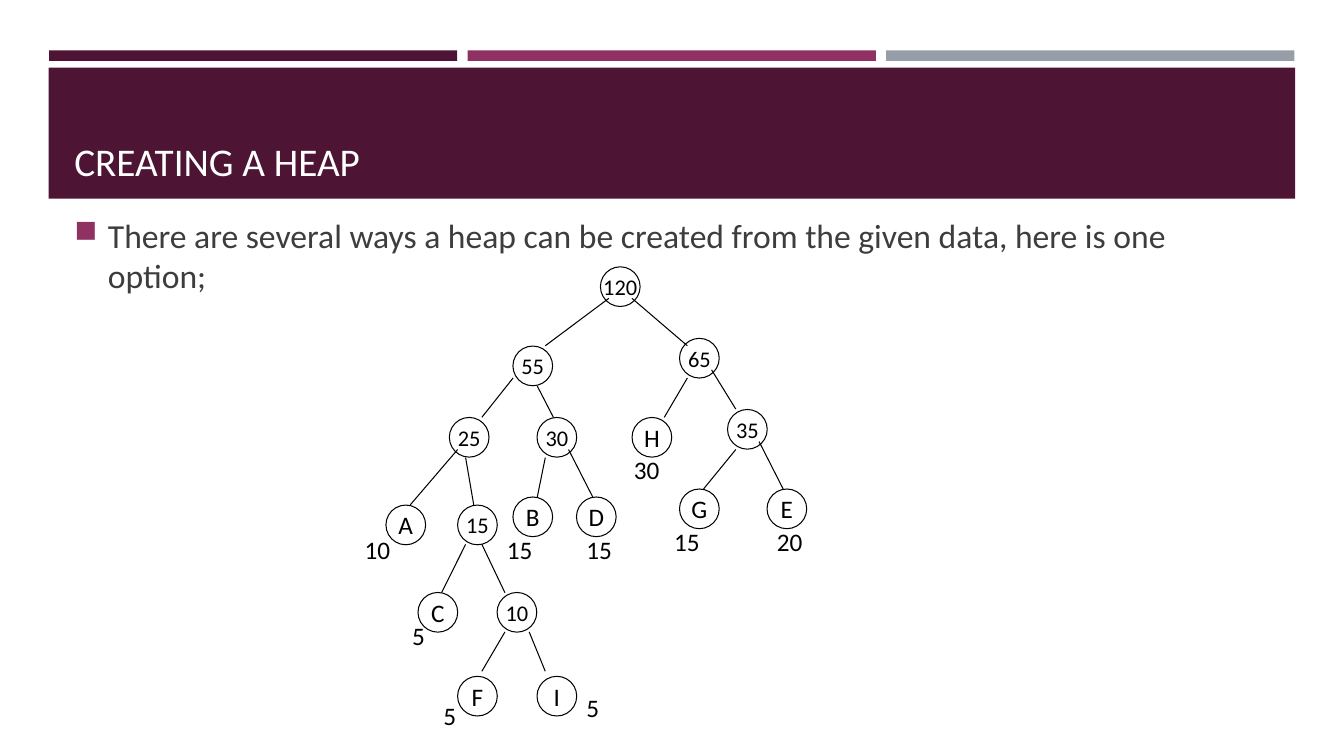
from lxml import etree
from pptx import Presentation
from pptx.dml.color import RGBColor as RGB
from pptx.enum.shapes import MSO_CONNECTOR as CONN, MSO_SHAPE as SHAPE
from pptx.enum.text import MSO_ANCHOR as ANCHOR, PP_ALIGN as ALIGN
from pptx.oxml.ns import qn
from pptx.util import Pt

THEME = {
    "font": "Calibri",
    "plum": RGB.from_string("4D1434"),
    "magenta": RGB.from_string("903163"),
    "gray": RGB.from_string("969FA7"),
    "body": RGB.from_string("3D3D3D"),
    "white": RGB.from_string("FFFFFF"),
    "black": RGB.from_string("000000"),
    "title_size": 28,
    "body_size": 24,
    "letter_size": 18,
    "sum_size": 16,
}
LINE_WIDTH = 0.75
NODE = 28.35


def add_run(tf, text, size, color):
    p = tf.paragraphs[0]
    r = p.add_run()
    r.text = text
    r.font.name = THEME["font"]
    r.font.size = Pt(size)
    r.font.color.rgb = color
    return p


def add_filled(kind, x, y, w, h, color):
    sp = s.shapes.add_shape(kind, Pt(x), Pt(y), Pt(w), Pt(h))
    sp.shadow.inherit = False
    sp.fill.solid()
    sp.fill.fore_color.rgb = color
    sp.line.fill.background()
    return sp


prs = Presentation()
prs.slide_width, prs.slide_height = Pt(960), Pt(540)
s = prs.slides.add_slide(prs.slide_layouts[6])

for i, color in enumerate(("plum", "magenta", "gray")):
    add_filled(SHAPE.RECTANGLE, 35 + i * 299, 36, 291.6, 7.5, THEME[color])
add_filled(SHAPE.RECTANGLE, 34.8, 48.4, 890.4, 93.6, THEME["plum"])

title = s.shapes.add_textbox(Pt(46), Pt(55.5), Pt(868), Pt(80))
tf = title.text_frame
tf.word_wrap = True
tf.vertical_anchor = ANCHOR.BOTTOM
add_run(tf, "CREATING A HEAP", THEME["title_size"], THEME["white"])

body = s.shapes.add_textbox(Pt(46), Pt(150), Pt(860), Pt(66))
tf = body.text_frame
tf.word_wrap = True
p = add_run(
    tf,
    "There are several ways a heap can be created from the given data, here is one option;",
    THEME["body_size"],
    THEME["body"],
)
pPr = p._p.get_or_add_pPr()
pPr.set("marL", str(Pt(24)))
pPr.set("indent", str(Pt(-24)))
buClr = etree.SubElement(pPr, qn("a:buClr"))
etree.SubElement(buClr, qn("a:srgbClr"), val=str(THEME["magenta"]))
etree.SubElement(pPr, qn("a:buSzPct"), val="92000")
etree.SubElement(pPr, qn("a:buChar"), char="■")

nodes = [
    ("120", 428.9, 190.6),
    ("55", 366.4, 247.2),
    ("65", 485.4, 241.7),
    ("25", 321, 298.2),
    ("30", 383.6, 298.2),
    ("H", 451.5, 298.2),
    ("35", 519.7, 292.5),
    ("A", 275.7, 360.8),
    ("15", 326.9, 360.8),
    ("B", 366.4, 355),
    ("D", 411.8, 355),
    ("G", 485.4, 349.3),
    ("E", 547.9, 349.3),
    ("C", 298.6, 423.2),
    ("10", 355.1, 423.2),
    ("F", 326.9, 483.1),
    ("I", 383.6, 483.1),
]
for text, x, y in nodes:
    sp = add_filled(SHAPE.OVAL, x, y, NODE, NODE, THEME["white"])
    sp.line.color.rgb = THEME["black"]
    sp.line.width = Pt(LINE_WIDTH)
    tf = sp.text_frame
    tf.word_wrap = False
    tf.vertical_anchor = ANCHOR.MIDDLE
    size = THEME["sum_size"] if text.isdigit() else THEME["letter_size"]
    add_run(tf, text, size, THEME["black"]).alignment = ALIGN.CENTER

edges = [
    (434.9, 213.1, 389.5, 247),
    (451.4, 213.1, 491, 247),
    (366.5, 270, 344.2, 298.1),
    (383.8, 275.8, 395.3, 298.1),
    (491, 270, 474.5, 298.1),
    (508.3, 264.2, 525.6, 292.3),
    (326.9, 321.1, 293, 360.7),
    (332.6, 326.9, 338.4, 360.7),
    (389.5, 326.9, 383.8, 355),
    (406.1, 321.1, 423.4, 355),
    (525.6, 321.1, 502.6, 349.2),
    (542.2, 315.4, 559.4, 349.2),
    (332.6, 388.8, 315.4, 423.4),
    (344.2, 388.8, 360.7, 423.4),
    (360.7, 451.4, 344.2, 479.5),
    (378, 451.4, 389.5, 479.5),
]
for x1, y1, x2, y2 in edges:
    edge = s.shapes.add_connector(CONN.STRAIGHT, Pt(x1), Pt(y1), Pt(x2), Pt(y2))
    edge.line.color.rgb = THEME["black"]
    edge.line.width = Pt(LINE_WIDTH)
    etree.SubElement(edge._element.spPr, qn("a:effectLst"))

weights = [
    ("30", 445.7, 321.1),
    ("10", 253.4, 378),
    ("15", 355, 378),
    ("15", 411.8, 378),
    ("15", 474.5, 372.2),
    ("20", 547.9, 372.2),
    ("5", 287.3, 439.9),
    ("5", 309.6, 496.8),
    ("5", 411.8, 491),
]
for text, x, y in weights:
    width = 32.4 if len(text) == 2 else 24.5
    box = s.shapes.add_textbox(Pt(x), Pt(y), Pt(width), Pt(28.8))
    tf = box.text_frame
    tf.word_wrap = False
    add_run(tf, text, THEME["letter_size"], THEME["black"])

prs.save("out.pptx")
